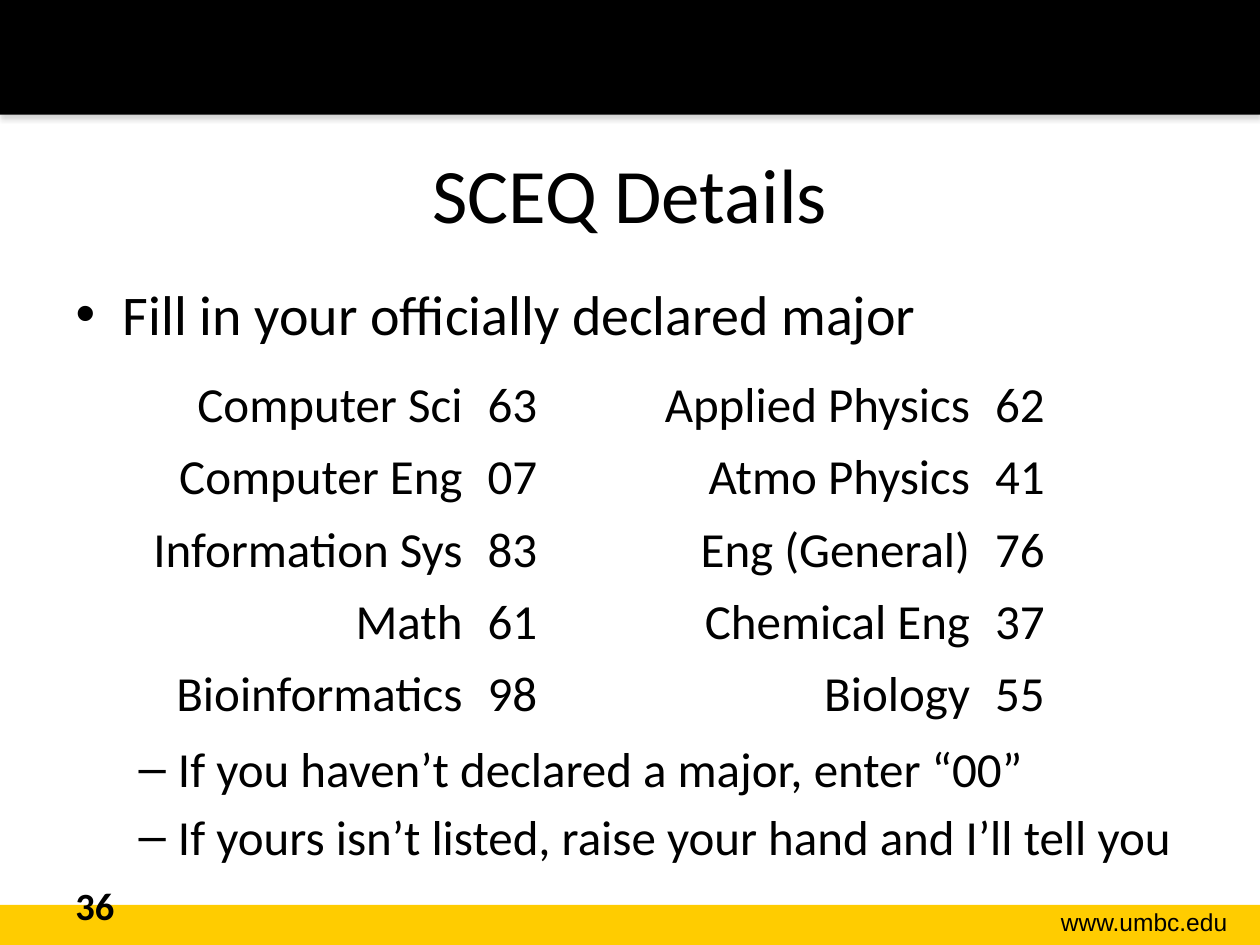
from dataclasses import dataclass

from lxml import etree
from pptx import Presentation
from pptx.dml.color import RGBColor
from pptx.enum.shapes import MSO_SHAPE
from pptx.enum.text import MSO_ANCHOR, MSO_AUTO_SIZE, PP_ALIGN
from pptx.oxml.ns import qn
from pptx.util import Pt

LEFT, CENTER, RIGHT = PP_ALIGN.LEFT, PP_ALIGN.CENTER, PP_ALIGN.RIGHT
MIDDLE = MSO_ANCHOR.MIDDLE
NO_AUTOFIT = MSO_AUTO_SIZE.NONE
RECTANGLE = MSO_SHAPE.RECTANGLE


@dataclass(frozen=True)
class Theme:
    black: RGBColor = RGBColor(0, 0, 0)
    gold: RGBColor = RGBColor(0xFF, 0xCC, 0)
    shadow: str = "808080"
    font: str = "Calibri"
    footer_font: str = "Arial"
    title: float = 44
    bullet: float = 32
    detail: float = 28
    page: float = 22
    footer: float = 14


@dataclass(frozen=True)
class Box:
    left: float
    top: float
    width: float
    height: float

    def lengths(self) -> tuple:
        return Pt(self.left), Pt(self.top), Pt(self.width), Pt(self.height)


@dataclass(frozen=True)
class ListItem:
    text: str
    level: int
    size: float
    space_before: float


THEME = Theme()
SLIDE_WIDTH, SLIDE_HEIGHT = 720, 540
TABLE_GAP = 224  # room for the table between the list items

ITEMS = [
    ListItem("Fill in your officially declared major", 0, THEME.bullet, 0),
    ListItem("If you haven’t declared a major, enter “00”", 1, THEME.detail, TABLE_GAP),
    ListItem("If yours isn’t listed, raise your hand and I’ll tell you", 1, THEME.detail, 5),
]
MAJORS = [
    ("Computer Sci", "63", "Applied Physics", "62"),
    ("Computer Eng", "07", "Atmo Physics", "41"),
    ("Information Sys", "83", "Eng (General)", "76"),
    ("Math", "61", "Chemical Eng", "37"),
    ("Bioinformatics", "98", "Biology", "55"),
]
COLUMN_WIDTHS = (214.5, 88.5, 201.5, 101.5)
ROW_HEIGHT = 41.4


def add_text(paragraph, text: str, size: float, align=LEFT,
             font: str = THEME.font, bold: bool = False) -> None:
    paragraph.alignment = align
    run = paragraph.add_run()
    run.text = text
    run.font.size = Pt(size)
    run.font.name = font
    run.font.bold = bold
    run.font.color.rgb = THEME.black


def place(shape, box: Box) -> None:
    shape.left, shape.top, shape.width, shape.height = box.lengths()


def add_bar(slide, box: Box, color: RGBColor):
    bar = slide.shapes.add_shape(RECTANGLE, *box.lengths())
    bar.shadow.inherit = False
    bar.fill.solid()
    bar.fill.fore_color.rgb = color
    bar.line.fill.background()
    return bar


def add_drop_shadow(shape) -> None:
    effects = shape._element.spPr.find(qn("a:effectLst"))
    shadow = etree.SubElement(effects, qn("a:outerShdw"), blurRad=str(Pt(3.1)),
                              dist=str(Pt(1.8)), dir="5400000", rotWithShape="0")
    color = etree.SubElement(shadow, qn("a:srgbClr"), val=THEME.shadow)
    etree.SubElement(color, qn("a:alpha"), val="35000")


def add_label(slide, box: Box, text: str, size: float, **style) -> None:
    frame = slide.shapes.add_textbox(*box.lengths()).text_frame
    frame.word_wrap = True
    add_text(frame.paragraphs[0], text, size, **style)


def fill_list(body, items: list[ListItem]) -> None:
    frame = body.text_frame
    frame.auto_size = NO_AUTOFIT
    for index, item in enumerate(items):
        paragraph = frame.add_paragraph() if index else frame.paragraphs[0]
        paragraph.level = item.level
        paragraph.space_before = Pt(item.space_before)
        add_text(paragraph, item.text, item.size)


def add_major_codes(slide, left: float, top: float) -> None:
    box = Box(left, top, sum(COLUMN_WIDTHS), ROW_HEIGHT * len(MAJORS))
    table = slide.shapes.add_table(len(MAJORS), len(COLUMN_WIDTHS), *box.lengths()).table
    table.first_row = table.horz_banding = False
    for column, width in zip(table.columns, COLUMN_WIDTHS):
        column.width = Pt(width)
    for row, values in zip(table.rows, MAJORS):
        row.height = Pt(ROW_HEIGHT)
        for index, (cell, value) in enumerate(zip(row.cells, values)):
            cell.fill.background()
            add_text(cell.text_frame.paragraphs[0], value, THEME.detail,
                     LEFT if index % 2 else RIGHT)


def main() -> None:
    deck = Presentation()
    deck.slide_width, deck.slide_height = Pt(SLIDE_WIDTH), Pt(SLIDE_HEIGHT)
    slide = deck.slides.add_slide(deck.slide_layouts[1])

    # Header and footer bars
    add_bar(slide, Box(0, 517, SLIDE_WIDTH, 23), THEME.gold)
    header = add_bar(slide, Box(0, 0, SLIDE_WIDTH, 65.5), THEME.black)
    add_drop_shadow(header)
    add_label(slide, Box(565, 515, 143.5, 24.5), "www.umbc.edu", THEME.footer,
              align=RIGHT, font=THEME.footer_font)

    # Title and list
    title, body = slide.placeholders
    place(title, Box(36, 65, 648, 90))
    title.text_frame.vertical_anchor = MIDDLE
    add_text(title.text_frame.paragraphs[0], "SCEQ Details", THEME.title, CENTER)
    place(body, Box(36, 156, 648, 327))
    fill_list(body, ITEMS)

    # Page number and major codes
    add_label(slide, Box(36, 500.5, 168, 29), "36", THEME.page, bold=True)
    add_major_codes(slide, 57, 211)

    deck.save("out.pptx")


if __name__ == "__main__":
    main()
